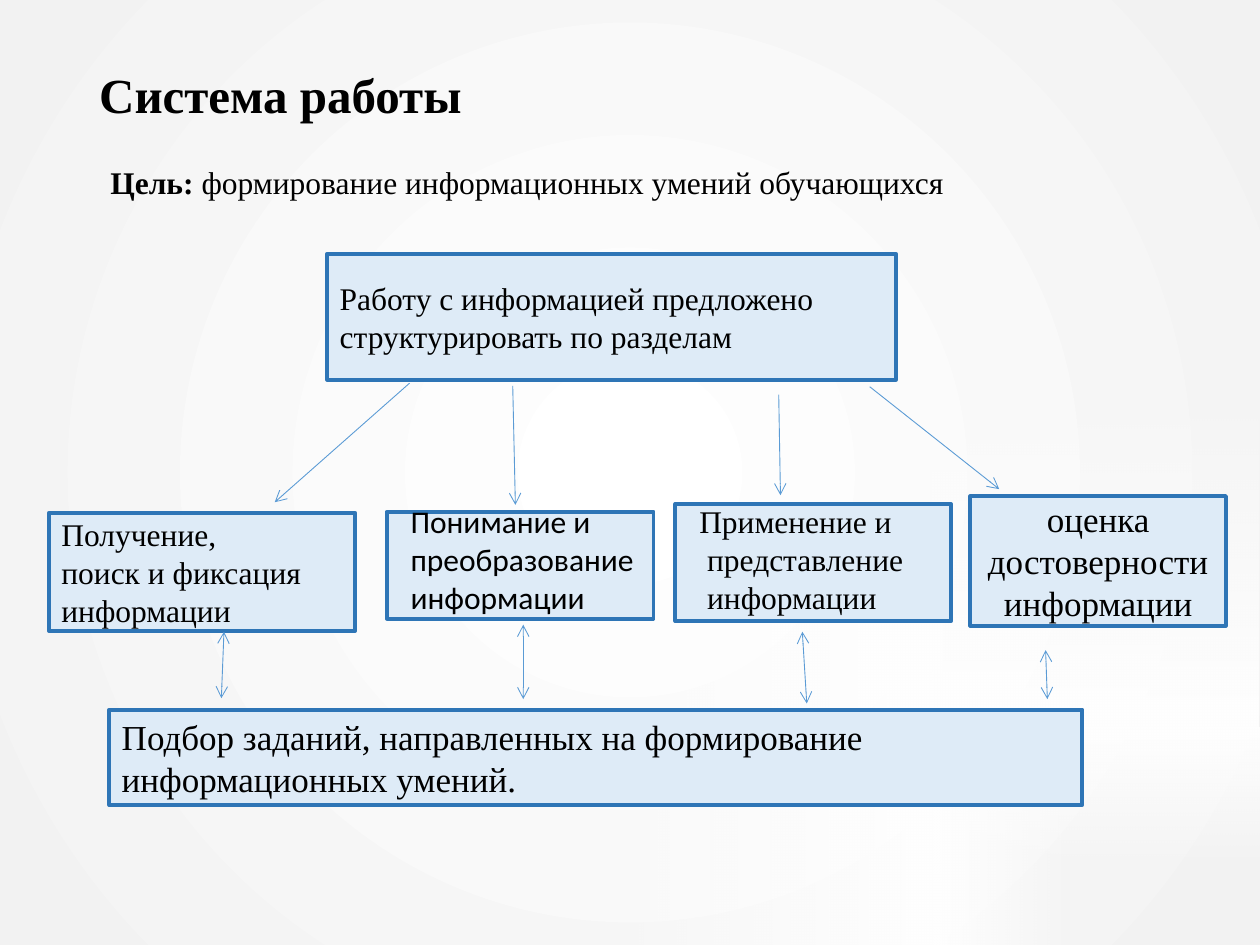
from pptx import Presentation
from pptx import util as u
from pptx.dml.color import RGBColor
from pptx.enum import shapes, text
from pptx.oxml import parse_xml
from pptx.oxml.ns import nsdecls, qn

COLOURS = {"text": "000000", "box": "DEEBF7", "border": "2E75B6",
           "arrow": "5B9BD5", "light": "FFFFFF", "edge": "F2F2F2"}
SERIF, SANS = "Times New Roman", "Calibri"
LEFT, CENTRE = text.PP_ALIGN.LEFT, text.PP_ALIGN.CENTER
TOP, MIDDLE = text.MSO_ANCHOR.TOP, text.MSO_ANCHOR.MIDDLE

# Frames are (left, top, width, height) in points
PAGE = (0, 0, 720, 540)
GLOWS = [  # frame, rotation
    ((512, 438.5, 124, 80), 270),
    ((534, 415.5, 186, 80), 0),
    ((533, 221, 186, 195), 180),
    ((348, 349, 186, 195), 90),
]
TITLE = ("Система работы", (49.5, 0, 620, 111.5))
GOAL = ("Цель:", " формирование информационных умений обучающихся")
GOAL_FRAME = (56, 89.5, 497, 51)

BOXES = [  # frame, paragraphs, size, alignment
    ((187, 145, 325, 72),
     ["Работу с информацией предложено структурировать по разделам"], 18, LEFT),
    ((28, 293, 175, 67.5),
     ["Получение,", "поиск и фиксация информации"], 18, LEFT),
    ((221, 292.5, 152.5, 61), [], 18, LEFT),
    ((386, 288, 157.5, 67), [], 18, LEFT),
    ((554.5, 283.5, 146, 74),
     ["оценка", "достоверности информации"], 20, CENTRE),
    ((62.5, 405.5, 556, 54.5),
     ["Подбор заданий, направленных на формирование информационных умений."],
     20, LEFT),
]
LABELS = [  # frame, paragraphs, font, indent of the later paragraphs
    ((227.5, 283.5, 190, 72.5),
     ["Понимание и преобразование информации"], SANS, 0),
    ((392.5, 283.5, 152.5, 72.5),
     ["Применение и", "представление", "информации"], SERIF, 4.5),
]
TO_SECTIONS = [(234, 219, 157, 287), (293, 220.5, 294.5, 288.5),
               (445, 225.5, 446, 283), (497, 221, 571, 279.5)]
TO_TASKS = [(128, 361, 126.5, 399), (299, 357, 299, 399.5),
            (458.5, 361, 461, 402), (597.5, 371.5, 598.5, 399.5)]


def rgb(name):
    return RGBColor.from_string(COLOURS[name])


def points(values):
    return [u.Pt(value) for value in values]


def apply(target, formats):
    for name, value in formats.items():
        setattr(target, name, value)


def style(run, size, face=SERIF, bold=False):
    apply(run.font, {"size": u.Pt(size), "name": face, "bold": bold})
    run.font.color.rgb = rgb("text")


def write(frame, paragraphs, size, face=SERIF, align=LEFT, anchor=TOP, indent=0):
    apply(frame, {"word_wrap": True, "vertical_anchor": anchor})
    for number, words in enumerate(paragraphs):
        paragraph = frame.paragraphs[0] if number == 0 else frame.add_paragraph()
        paragraph.alignment = align
        if number and indent:
            paragraph._p.get_or_add_pPr().set("marL", str(u.Pt(indent)))
        run = paragraph.add_run()
        run.text = words
        style(run, size, face)


def add_rectangle(slide, frame):
    rectangle = slide.shapes.add_shape(shapes.MSO_SHAPE.RECTANGLE, *points(frame))
    rectangle.shadow.inherit = False
    return rectangle


def add_gradient(slide, frame, end, direction, opacity=100, rotation=0):
    """Add a borderless rectangle fading from the light colour to end."""
    rectangle = add_rectangle(slide, frame)
    rectangle.rotation = rotation
    rectangle.line.fill.background()
    rectangle.fill.background()
    fill = parse_xml(
        f'<a:gradFill {nsdecls("a")} rotWithShape="1"><a:gsLst>'
        f'<a:gs pos="0"><a:srgbClr val="{COLOURS["light"]}"/></a:gs>'
        f'<a:gs pos="100000"><a:srgbClr val="{COLOURS[end]}">'
        f'<a:alpha val="{opacity * 1000}"/></a:srgbClr></a:gs>'
        f'</a:gsLst>{direction}</a:gradFill>')
    properties = rectangle._element.spPr
    properties.replace(properties.find(qn("a:noFill")), fill)


def add_box(slide, frame, paragraphs, size, align):
    box = add_rectangle(slide, frame)
    box.fill.solid()
    box.fill.fore_color.rgb = rgb("box")
    box.line.color.rgb = rgb("border")
    box.line.width = u.Pt(2.25)
    write(box.text_frame, paragraphs, size, align=align, anchor=MIDDLE)


def add_arrow(slide, ends, heads):
    arrow = slide.shapes.add_connector(shapes.MSO_CONNECTOR.STRAIGHT, *points(ends))
    arrow.line.color.rgb = rgb("arrow")
    arrow.line.width = u.Pt(0.5)
    line = arrow.line._get_or_add_ln()
    for head in heads:
        line.append(parse_xml(f'<a:{head} {nsdecls("a")} type="arrow"/>'))
    arrow._element.spPr.append(parse_xml(f'<a:effectLst {nsdecls("a")}/>'))


def main():
    deck = Presentation()
    deck.slide_width, deck.slide_height = points(PAGE[2:])
    slide = deck.slides.add_slide(deck.slide_layouts[5])

    add_gradient(slide, PAGE, "edge",
                 '<a:path path="circle"><a:fillToRect l="50000" t="50000" '
                 'r="50000" b="50000"/></a:path>')
    for frame, rotation in GLOWS:
        add_gradient(slide, frame, "light", '<a:lin ang="5400000" scaled="0"/>',
                     opacity=0, rotation=rotation)

    title = slide.shapes.title
    words, frame = TITLE
    apply(title, dict(zip(("left", "top", "width", "height"), points(frame))))
    write(title.text_frame, [words], 28, anchor=MIDDLE)
    title.text_frame.paragraphs[0].line_spacing = 0.9
    title.text_frame.paragraphs[0].runs[0].font.bold = True
    slide.shapes._spTree.append(title._element)  # in front of the backdrop

    goal = slide.shapes.add_textbox(*points(GOAL_FRAME)).text_frame
    goal.word_wrap = True
    for words, bold in zip(GOAL, (True, False)):
        run = goal.paragraphs[0].add_run()
        run.text = words
        style(run, 18, bold=bold)

    for box in BOXES:
        add_box(slide, *box)
    for frame, paragraphs, face, indent in LABELS:
        label = slide.shapes.add_textbox(*points(frame))
        write(label.text_frame, paragraphs, 18, face, indent=indent)
    for ends in TO_SECTIONS:
        add_arrow(slide, ends, ["tailEnd"])
    for ends in TO_TASKS:
        add_arrow(slide, ends, ["headEnd", "tailEnd"])

    deck.save("out.pptx")


if __name__ == "__main__":
    main()
